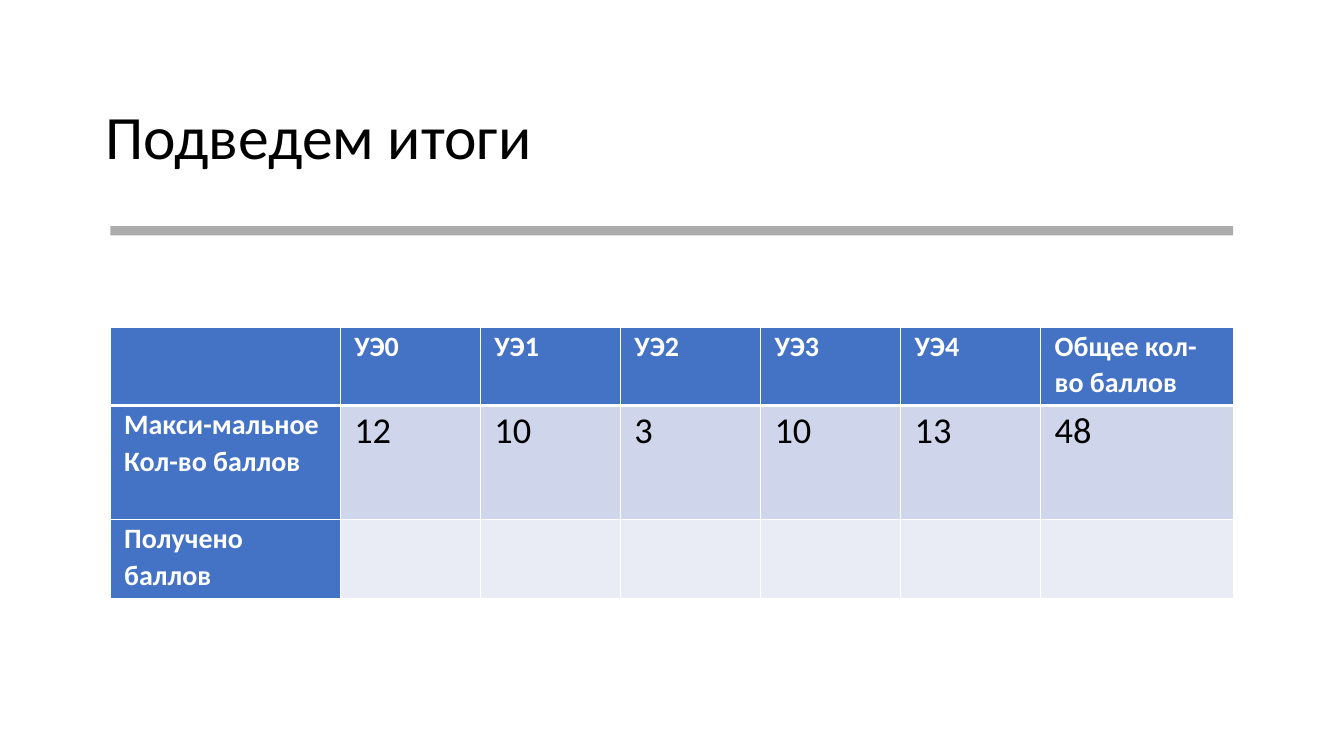
from dataclasses import dataclass

from lxml.etree import SubElement as Sub
from pptx import Presentation as Deck
from pptx.dml.color import RGBColor as Rgb
from pptx.enum.shapes import MSO_SHAPE as Form
from pptx.enum.text import MSO_ANCHOR as Anchor
from pptx.oxml.ns import qn
from pptx.util import Cm, Pt


@dataclass
class Theme:
    font: str = "Calibri"
    ink: str = "000000"
    white: str = "FFFFFF"
    rule: str = "808080"
    head: str = "4472C4"
    bands: tuple = ("CFD5EA", "E9EBF5")
    title: int = 44
    label: int = 20
    score: int = 26
    thin: int = 1
    thick: int = 3


class Page:
    def __init__(self, slide, theme):
        self.slide = slide
        self.theme = theme

    def text(self, frame, lines, size, color, bold=False, gap=1.07):
        for i, line in enumerate(lines):
            para = frame.add_paragraph() if i else frame.paragraphs[0]
            para.line_spacing = gap
            run = para.add_run()
            run.text = line
            font = run.font
            font.name = self.theme.font
            font.size = Pt(size)
            font.bold = bold
            font.color.rgb = Rgb.from_string(color)

    def title(self, words, *area):
        frame = self.slide.shapes.add_textbox(*map(Cm, area)).text_frame
        frame.word_wrap = True
        frame.vertical_anchor = Anchor.MIDDLE
        self.text(frame, [words], self.theme.title, self.theme.ink, gap=0.9)

    def bar(self, alpha, *area):
        bar = self.slide.shapes.add_shape(Form.RECTANGLE, *map(Cm, area))
        bar.shadow.inherit = False
        bar.line.fill.background()
        bar.fill.solid()
        bar.fill.fore_color.rgb = Rgb.from_string(self.theme.rule)
        tint = bar.element.spPr.find(qn("a:solidFill")).find(qn("a:srgbClr"))
        Sub(tint, qn("a:alpha"), val=str(alpha * 1000))

    def edge(self, cell, side, width):
        props = cell._tc.get_or_add_tcPr()
        line = Sub(props, qn("a:ln" + side), w=str(Pt(width)))
        Sub(Sub(line, qn("a:solidFill")), qn("a:srgbClr"), val=self.theme.white)

    def cell(self, cell, lines, row, col):
        theme = self.theme
        head = row == 0 or col == 0
        cell.margin_left = cell.margin_right = Cm(0.35)
        cell.margin_top = cell.margin_bottom = 0
        thick = {(0, "B"), (1, "T")}
        for side in "LRTB":
            self.edge(cell, side, theme.thick if (row, side) in thick else theme.thin)
        cell.fill.solid()
        cell.fill.fore_color.rgb = Rgb.from_string(theme.head if head else theme.bands[row - 1])
        size, color = (theme.label, theme.white) if head else (theme.score, theme.ink)
        self.text(cell.text_frame, lines, size, color, head)

    def table(self, rows, wide, high, left, top):
        area = map(Cm, (left, top, sum(wide), sum(high)))
        grid = self.slide.shapes.add_table(len(rows), len(wide), *area).table
        grid.first_col = True
        for col, width in zip(grid.columns, wide):
            col.width = Cm(width)
        for row, height in zip(grid.rows, high):
            row.height = Cm(height)
        for r, row in enumerate(rows):
            for c, words in enumerate(row):
                self.cell(grid.cell(r, c), words.splitlines(), r, c)


def main():
    deck = Deck()
    deck.slide_width, deck.slide_height = Cm(33.87), Cm(19.05)
    page = Page(deck.slides.add_slide(deck.slide_layouts[6]), Theme())
    page.title("Подведем итоги", 2.41, 1.68, 29.03, 3.68)
    page.bar(65, 2.78, 5.7, 28.3, 0.23)
    units = [f"УЭ{n}" for n in range(5)]
    rows = [
        ["", *units, "Общее кол-во баллов"],
        ["Макси-мальное\nКол-во баллов", "12", "10", "3", "10", "13", "48"],
        ["Получено баллов"] + [""] * 6,
    ]
    wide = [5.8] + [3.53] * 5 + [4.85]
    page.table(rows, wide, [1.98, 2.88, 1.98], 2.78, 8.24)
    deck.save("out.pptx")


if __name__ == "__main__":
    main()
